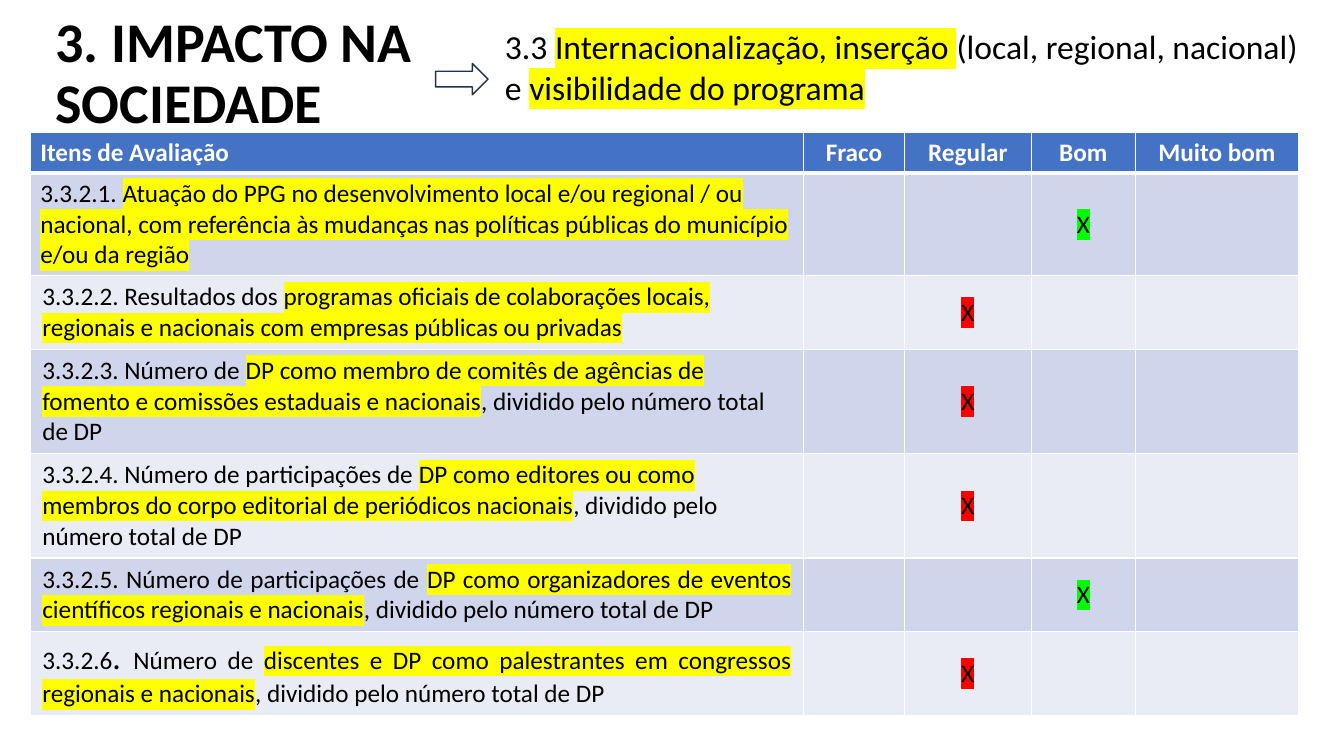
from dataclasses import dataclass

from lxml import etree
from pptx import Presentation
from pptx.dml.color import RGBColor
from pptx.enum.shapes import MSO_SHAPE
from pptx.enum.text import MSO_ANCHOR, MSO_AUTO_SIZE, PP_ALIGN
from pptx.oxml.ns import qn
from pptx.util import Inches, Pt

RIGHT_ARROW = MSO_SHAPE.RIGHT_ARROW
MIDDLE = MSO_ANCHOR.MIDDLE
TOP = MSO_ANCHOR.TOP
NO_AUTOFIT = MSO_AUTO_SIZE.NONE
LEFT = PP_ALIGN.LEFT
CENTER = PP_ALIGN.CENTER
JUSTIFY = PP_ALIGN.JUSTIFY

FONT = "Calibri"
COLORS = {
    "text": "000000",
    "white": "FFFFFF",
    "header": "4472C4",
    "odd_row": "CFD5EA",
    "even_row": "E9EBF5",
    "arrow": "1E3256",
    "yellow": "FFFF00",
    "good": "00FF00",
    "regular": "FF0000",
}
COLUMN_WIDTHS = [7.67, 1, 1.26, 1.03, 1.62]
ROW_HEIGHT = 0.41
HEADERS = ["Itens de Avaliação", "Fraco", "Regular", "Bom", "Muito bom"]
MARK_COLUMNS = {"regular": 2, "good": 3}


@dataclass
class Span:
    text: str
    highlight: str = ""
    size: int = 18


@dataclass
class Item:
    spans: list
    rating: str
    alignment: int = LEFT
    padded: bool = True


PER_TEACHER = Span(", dividido pelo número total de DP")
ITEMS = [
    Item([Span("3.3.2.1. "),
          Span("Atuação do PPG no desenvolvimento local e/ou regional / ou nacional, com referência "
               "às mudanças nas políticas públicas do município e/ou da região", "yellow")],
         "good", padded=False),
    Item([Span("3.3.2.2. Resultados dos "),
          Span("programas oficiais de colaborações locais, regionais e nacionais com empresas "
               "públicas ou privadas", "yellow")],
         "regular"),
    Item([Span("3.3.2.3. Número de "),
          Span("DP como membro de comitês de agências de fomento e comissões estaduais e nacionais",
               "yellow"),
          PER_TEACHER],
         "regular"),
    Item([Span("3.3.2.4. Número de participações de "),
          Span("DP como editores ou como membros do corpo editorial de periódicos nacionais",
               "yellow"),
          PER_TEACHER],
         "regular"),
    Item([Span("3.3.2.5. Número de participações de "),
          Span("DP como organizadores de eventos científicos regionais e nacionais", "yellow"),
          PER_TEACHER],
         "good", JUSTIFY),
    Item([Span("3.3.2.6"),
          Span(". ", size=24),
          Span("Número de "),
          Span("discentes e DP como palestrantes em congressos regionais e nacionais", "yellow"),
          PER_TEACHER],
         "regular", JUSTIFY),
]


class SlideBuilder:
    def __init__(self, presentation):
        self.slide = presentation.slides.add_slide(presentation.slide_layouts[5])

    def color(self, name):
        return RGBColor.from_string(COLORS[name])

    def add_spans(self, paragraph, spans, alignment=LEFT, color="text", bold=False):
        paragraph.alignment = alignment
        for span in spans:
            run = paragraph.add_run()
            run.text = span.text
            run.font.size = Pt(span.size)
            run.font.bold = bold
            run.font.name = FONT
            run.font.color.rgb = self.color(color)
            if span.highlight:
                highlight = etree.Element(qn("a:highlight"))
                etree.SubElement(highlight, qn("a:srgbClr"), val=COLORS[span.highlight])
                run._r.rPr.find(qn("a:solidFill")).addnext(highlight)

    def title(self, text, left, top, width, height):
        title = self.slide.shapes.title
        title.left, title.top = Inches(left), Inches(top)
        title.width, title.height = Inches(width), Inches(height)
        frame = title.text_frame
        frame.word_wrap = True
        frame.auto_size = NO_AUTOFIT
        frame.vertical_anchor = MIDDLE
        frame.paragraphs[0].line_spacing = 0.9
        self.add_spans(frame.paragraphs[0], [Span(text, size=40)], bold=True)

    def text(self, spans, left, top, width, height):
        box = self.slide.shapes.add_textbox(Inches(left), Inches(top), Inches(width), Inches(height))
        box.text_frame.word_wrap = True
        self.add_spans(box.text_frame.paragraphs[0], spans)

    def arrow(self, left, top, width, height):
        arrow = self.slide.shapes.add_shape(
            RIGHT_ARROW, Inches(left), Inches(top), Inches(width), Inches(height))
        arrow.shadow.inherit = False
        arrow.fill.background()
        arrow.line.color.rgb = self.color("arrow")
        arrow.line.width = Pt(1)

    def style_cell(self, cell, fill, bottom_width=1):
        properties = cell._tc.get_or_add_tcPr()
        for side in ("L", "R", "T", "B"):
            width = Pt(bottom_width if side == "B" else 1)
            line = etree.SubElement(properties, qn(f"a:ln{side}"), w=str(width))
            solid = etree.SubElement(line, qn("a:solidFill"))
            etree.SubElement(solid, qn("a:srgbClr"), val=COLORS["white"])
        cell.fill.solid()
        cell.fill.fore_color.rgb = self.color(fill)

    def table(self, headers, items, left, top):
        row_count = len(items) + 1
        table = self.slide.shapes.add_table(
            row_count, len(headers), Inches(left), Inches(top),
            Inches(sum(COLUMN_WIDTHS)), Inches(ROW_HEIGHT * row_count)).table
        for column, width in zip(table.columns, COLUMN_WIDTHS):
            column.width = Inches(width)
        for row in table.rows:
            row.height = Inches(ROW_HEIGHT)
        for index, header in enumerate(headers):
            cell = table.cell(0, index)
            self.style_cell(cell, "header", 3)
            cell.vertical_anchor = MIDDLE if index else TOP
            self.add_spans(cell.text_frame.paragraphs[0], [Span(header)],
                           CENTER if index else LEFT, "white", True)
        for row, item in enumerate(items, 1):
            for index in range(len(headers)):
                self.style_cell(table.cell(row, index), "odd_row" if row % 2 else "even_row")
            label = table.cell(row, 0)
            if item.padded:
                label.margin_left = label.margin_right = Inches(0.12)
                label.margin_top = label.margin_bottom = Inches(0.06)
            self.add_spans(label.text_frame.paragraphs[0], item.spans, item.alignment)
            mark = table.cell(row, MARK_COLUMNS[item.rating])
            mark.vertical_anchor = MIDDLE
            self.add_spans(mark.text_frame.paragraphs[0], [Span("X", item.rating)], CENTER)


def main():
    presentation = Presentation()
    presentation.slide_width = Inches(13.33)
    presentation.slide_height = Inches(7.5)
    builder = SlideBuilder(presentation)
    builder.title("3. IMPACTO NA SOCIEDADE", 0.45, 0.02, 3.82, 1.45)
    builder.table(HEADERS, ITEMS, 0.3, 1.31)
    builder.text([
        Span("3.3 ", size=24),
        Span("Internacionalização, inserção ", "yellow", 24),
        Span("(local, regional, nacional) e ", size=24),
        Span("visibilidade do programa", "yellow", 24),
    ], 4.91, 0.21, 8.17, 0.91)
    builder.arrow(4.32, 0.63, 0.52, 0.31)
    presentation.save("out.pptx")


if __name__ == "__main__":
    main()
